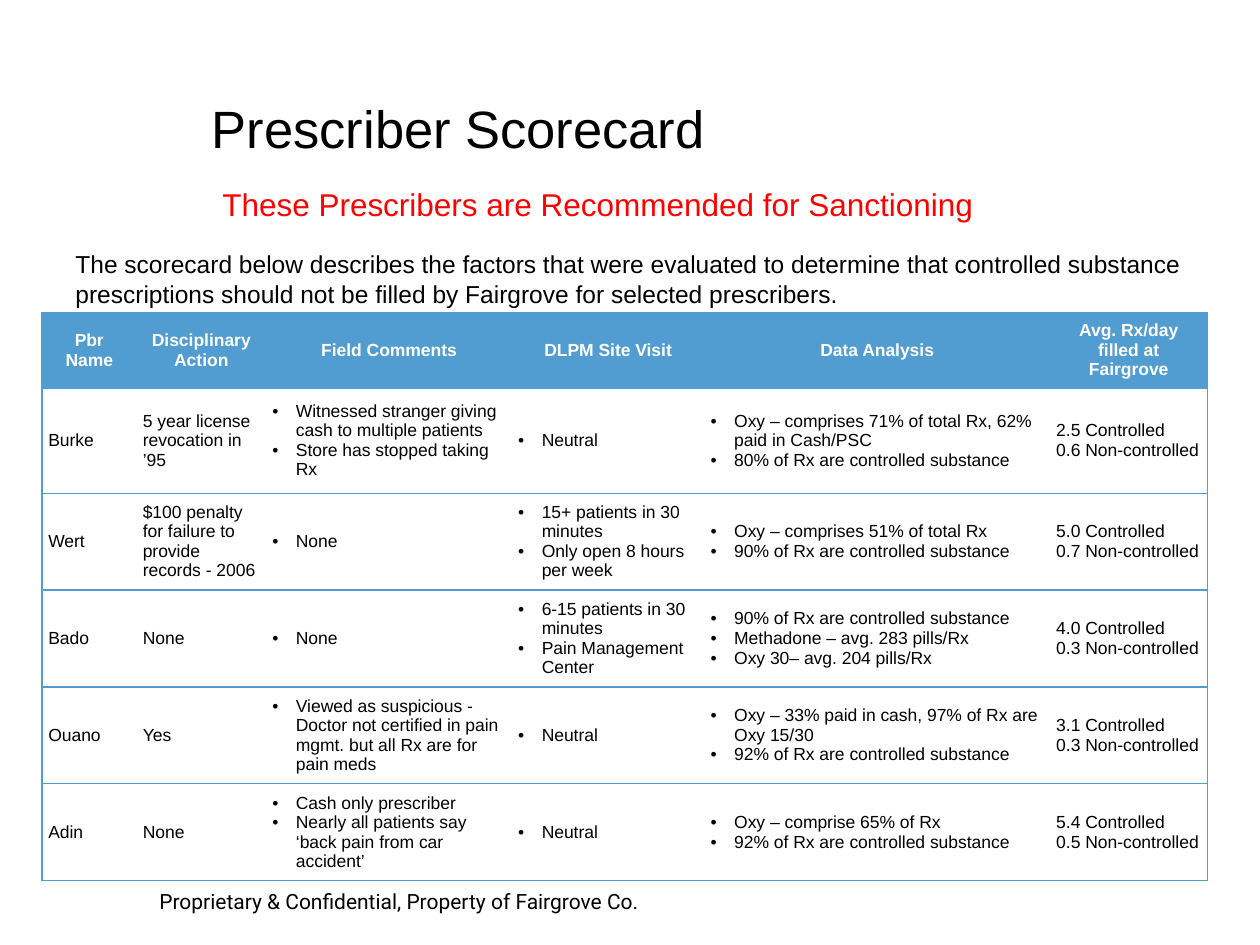
from lxml import etree
from pptx import Presentation
from pptx.dml.color import RGBColor
from pptx.enum.text import MSO_ANCHOR, PP_ALIGN
from pptx.oxml.ns import qn
from pptx.util import Pt

TOP, MIDDLE = MSO_ANCHOR.TOP, MSO_ANCHOR.MIDDLE
LEFT, CENTER = PP_ALIGN.LEFT, PP_ALIGN.CENTER

THEME = {
    "black": "000000",
    "white": "FFFFFF",
    "red": "FF0000",
    "blue": "519DD1",
    "font": "Arial",
    "footer_font": "Roboto",
    "title": 30,
    "subtitle": 18,
    "intro": 14,
    "footer": 12,
    "cell": 10,
}

TEXTS = [
    {"text": "Proprietary & Confidential, Property of Fairgrove Co.",
     "at": (84, 504, 342, 36.5), "size": "footer", "font": "footer_font"},
    {"text": "Prescriber Scorecard",
     "at": (114, 54, 612, 42), "size": "title", "anchor": MIDDLE, "spacing": 0.9},
    {"text": "The scorecard below describes the factors that were evaluated to determine "
             "that controlled substance prescriptions should not be filled by Fairgrove "
             "for selected prescribers.",
     "at": (36, 139, 660, 41), "size": "intro"},
    {"text": "These Prescribers are Recommended for Sanctioning",
     "at": (120, 102, 448, 29), "size": "subtitle", "color": "red", "wrap": False},
]

HEADERS = ["Pbr Name", "Disciplinary Action", "Field Comments", "DLPM Site Visit",
           "Data Analysis", "Avg. Rx/day filled at Fairgrove"]
PRESCRIBERS = [
    [["Burke"], ["5 year license revocation in ’95"],
     ["Witnessed stranger giving cash to multiple patients", "Store has stopped taking Rx"],
     ["Neutral"],
     ["Oxy – comprises 71% of total Rx, 62% paid in Cash/PSC",
      "80% of Rx are controlled substance"],
     ["2.5 Controlled", "0.6 Non-controlled"]],
    [["Wert"], ["$100 penalty for failure to provide records - 2006"],
     ["None"],
     ["15+ patients in 30 minutes", "Only open 8 hours per week"],
     ["Oxy – comprises 51% of total Rx", "90% of Rx are controlled substance"],
     ["5.0 Controlled", "0.7 Non-controlled"]],
    [["Bado"], ["None"],
     ["None"],
     ["6-15 patients in 30 minutes", "Pain Management Center"],
     ["90% of Rx are controlled substance", "Methadone – avg. 283 pills/Rx",
      "Oxy 30– avg. 204 pills/Rx"],
     ["4.0 Controlled", "0.3 Non-controlled"]],
    [["Ouano"], ["Yes"],
     ["Viewed as suspicious - Doctor not certified in pain mgmt. but all Rx are for pain meds"],
     ["Neutral"],
     ["Oxy – 33% paid in cash, 97% of Rx are Oxy 15/30",
      "92% of Rx are controlled substance"],
     ["3.1 Controlled", "0.3 Non-controlled"]],
    [["Adin"], ["None"],
     ["Cash only prescriber", "Nearly all patients say ‘back pain from car accident’"],
     ["Neutral"],
     ["Oxy – comprise 65% of Rx", "92% of Rx are controlled substance"],
     ["5.4 Controlled", "0.5 Non-controlled"]],
]
BULLET_COLUMNS = {2, 3, 4}
COLUMN_WIDTHS = [54, 74, 140.5, 110, 197.5, 90]
ROW_HEIGHTS = [42.7, 60] + [55.4] * 4
TABLE_LEFT, TABLE_TOP = 24, 178.5
CELL_MARGIN, BULLET_INDENT, BORDER_WIDTH = 3.6, 13.5, 0.75


def set_values(target, values):
    for name, value in values.items():
        setattr(target, name, value)


def write_span(para, text, size, color="black", font="font", bold=False):
    span = para.add_run()
    span.text = text
    set_values(span.font, {"name": THEME[font], "size": Pt(THEME[size]), "bold": bold})
    span.font.color.rgb = RGBColor.from_string(THEME[color])


def add_text(page, item):
    box = page.shapes.add_textbox(*map(Pt, item["at"]))
    set_values(box.text_frame, {"word_wrap": item.get("wrap", True),
                                "vertical_anchor": item.get("anchor", TOP)})
    para = box.text_frame.paragraphs[0]
    para.line_spacing = item.get("spacing", 1.0)
    write_span(para, item["text"], item["size"], item.get("color", "black"),
               item.get("font", "font"))


def add_bullet(para):
    properties = para._p.get_or_add_pPr()
    properties.set("marL", str(Pt(BULLET_INDENT)))
    properties.set("indent", str(-Pt(BULLET_INDENT)))
    etree.SubElement(properties, qn("a:buFont"), typeface=THEME["font"])
    etree.SubElement(properties, qn("a:buChar"), char="•")


def set_borders(cell, sides):
    properties = cell._tc.get_or_add_tcPr()
    for position, side in enumerate("LRTB"):
        line = etree.Element(qn("a:ln" + side), w=str(Pt(BORDER_WIDTH)))
        if side in sides:
            fill = etree.SubElement(line, qn("a:solidFill"))
            etree.SubElement(fill, qn("a:srgbClr"), val=THEME["blue"])
        else:
            etree.SubElement(line, qn("a:noFill"))
        properties.insert(position, line)


def fill_cell(cell, lines, row, column):
    header = row == 0
    cell.vertical_anchor = MIDDLE
    if not header:
        set_values(cell, {"margin_" + side: Pt(CELL_MARGIN)
                          for side in ("left", "right", "top", "bottom")})
    cell.fill.solid()
    cell.fill.fore_color.rgb = RGBColor.from_string(THEME["blue" if header else "white"])
    frame = cell.text_frame
    for index, text in enumerate(lines):
        para = frame.add_paragraph() if index else frame.paragraphs[0]
        para.alignment = CENTER if header else LEFT
        if not header and column in BULLET_COLUMNS:
            add_bullet(para)
        write_span(para, text, "cell", "white" if header else "black", bold=header)
    sides = "TB"
    if column == 0:
        sides += "L"
    if column == len(HEADERS) - 1:
        sides += "R"
    set_borders(cell, sides)


def add_scorecard(page):
    rows = [[[header] for header in HEADERS]] + PRESCRIBERS
    table = page.shapes.add_table(
        len(rows), len(HEADERS), Pt(TABLE_LEFT), Pt(TABLE_TOP),
        Pt(sum(COLUMN_WIDTHS)), Pt(sum(ROW_HEIGHTS))).table
    table.horz_banding = False
    for column, width in zip(table.columns, COLUMN_WIDTHS):
        column.width = Pt(width)
    for row, height in zip(table.rows, ROW_HEIGHTS):
        row.height = Pt(height)
    for row, entries in enumerate(rows):
        for column, lines in enumerate(entries):
            fill_cell(table.cell(row, column), lines, row, column)


def main():
    deck = Presentation()
    set_values(deck, {"slide_width": Pt(720), "slide_height": Pt(540)})
    page = deck.slides.add_slide(deck.slide_layouts[6])
    for item in TEXTS:
        add_text(page, item)
    add_scorecard(page)
    deck.save("out.pptx")


if __name__ == "__main__":
    main()
